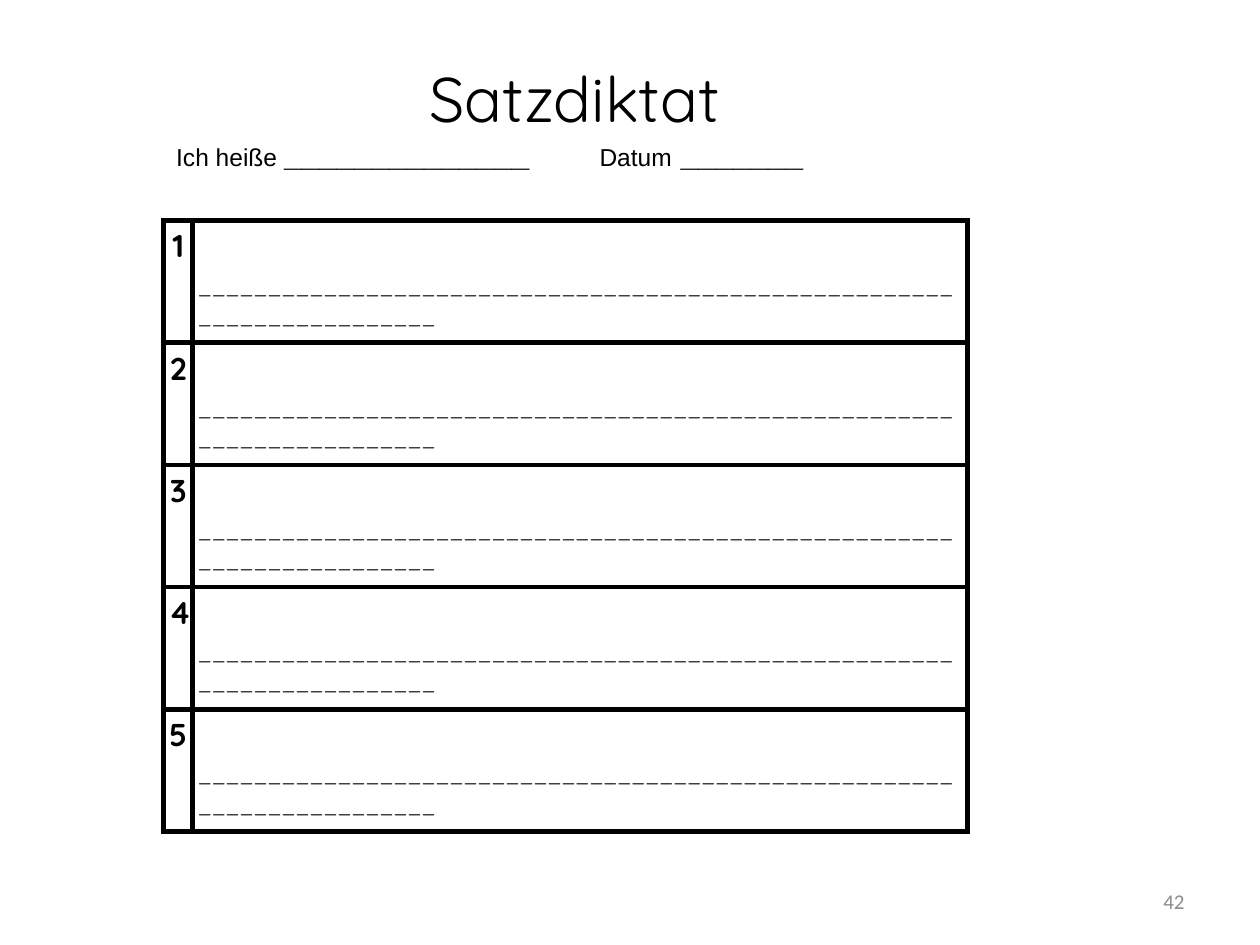
from lxml import etree
from pptx import Presentation
from pptx.dml.color import RGBColor
from pptx.enum.text import MSO_ANCHOR, PP_ALIGN
from pptx.oxml.ns import qn
from pptx.util import Inches, Pt

BLACK = RGBColor(0x00, 0x00, 0x00)
GREY = RGBColor(0x8C, 0x8C, 0x8C)
LEFT, CENTER, RIGHT = PP_ALIGN.LEFT, PP_ALIGN.CENTER, PP_ALIGN.RIGHT
MIDDLE = MSO_ANCHOR.MIDDLE
HEADING_FONT, BODY_FONT, NUMBER_FONT = "Quicksand", "Arial", "Calibri"
SENTENCES = 5
WRITING_LINE = "_" * 71


class Worksheet:
    border_width = Pt(3)
    border_color = BLACK

    def __init__(self, slide):
        self.slide = slide

    def add_run(self, paragraph, text, size, font, color=BLACK, bold=False):
        run = paragraph.add_run()
        run.text = text
        run.font.size = Pt(size)
        run.font.name = font
        run.font.bold = bold
        run.font.color.rgb = color

    def text_box(self, left, top, width, height):
        box = self.slide.shapes.add_textbox(
            Inches(left), Inches(top), Inches(width), Inches(height))
        frame = box.text_frame
        frame.word_wrap = True
        frame.vertical_anchor = MIDDLE
        return frame

    def tab_stop(self, paragraph, position):
        tabs = etree.SubElement(paragraph._p.get_or_add_pPr(), qn("a:tabLst"))
        etree.SubElement(tabs, qn("a:tab"), pos=str(Inches(position)), algn="l")

    def borders(self, cell):
        properties = cell._tc.get_or_add_tcPr()
        for index, side in enumerate(("a:lnL", "a:lnR", "a:lnT", "a:lnB")):
            line = etree.Element(qn(side), w=str(self.border_width))
            fill = etree.SubElement(line, qn("a:solidFill"))
            etree.SubElement(fill, qn("a:srgbClr"), val=str(self.border_color))
            properties.insert(index, line)

    def cell(self, cell, text, size, align, bold=False, top=0):
        cell.margin_left = cell.margin_right = Inches(0.04)
        cell.margin_top, cell.margin_bottom = Inches(top), 0
        cell.fill.background()
        self.borders(cell)
        paragraph = cell.text_frame.paragraphs[0]
        paragraph.alignment = align
        paragraph.line_spacing = 1.15
        paragraph.space_after = Pt(10)
        self.add_run(paragraph, text, size, HEADING_FONT, bold=bold)

    def table(self, left, top, column_widths, row_height, rows):
        table = self.slide.shapes.add_table(
            rows, len(column_widths), Inches(left), Inches(top),
            Inches(sum(column_widths)), Inches(row_height * rows)).table
        table.first_row = table.horz_banding = False
        for column, width in zip(table.columns, column_widths):
            column.width = Inches(width)
        for row in table.rows:
            row.height = Inches(row_height)
        return table


def main():
    presentation = Presentation()
    presentation.slide_width, presentation.slide_height = Inches(10), Inches(7.5)
    sheet = Worksheet(presentation.slides.add_slide(presentation.slide_layouts[6]))

    page_number = sheet.text_box(7.17, 6.95, 2.33, 0.4).paragraphs[0]
    page_number.alignment = RIGHT
    sheet.add_run(page_number, "42", 12, NUMBER_FONT, GREY)

    header = sheet.text_box(1.3, 0.42, 6.69, 1.01)
    header.margin_right = Inches(0.27)
    title = header.paragraphs[0]
    title.alignment = CENTER
    sheet.add_run(title, "Satzdiktat", 36, HEADING_FONT)

    name_and_date = header.add_paragraph()
    name_and_date.alignment = LEFT
    sheet.tab_stop(name_and_date, 3.36)
    for text, size, bold in (("Ich heiße ", 14, False), ("_" * 14 + "\t", 18, True),
                             ("Datum", 14, False), (" " + "_" * 7, 18, True)):
        sheet.add_run(name_and_date, text, size, BODY_FONT, bold=bold)

    dictation = sheet.table(1.3, 1.75, (0.23, 6.15), 0.97, SENTENCES)
    for row in range(SENTENCES):
        sheet.cell(dictation.cell(row, 0), str(row + 1), 18, CENTER, bold=True)
        sheet.cell(dictation.cell(row, 1), WRITING_LINE, 12, LEFT, top=0.38)

    presentation.save("out.pptx")


if __name__ == "__main__":
    main()
